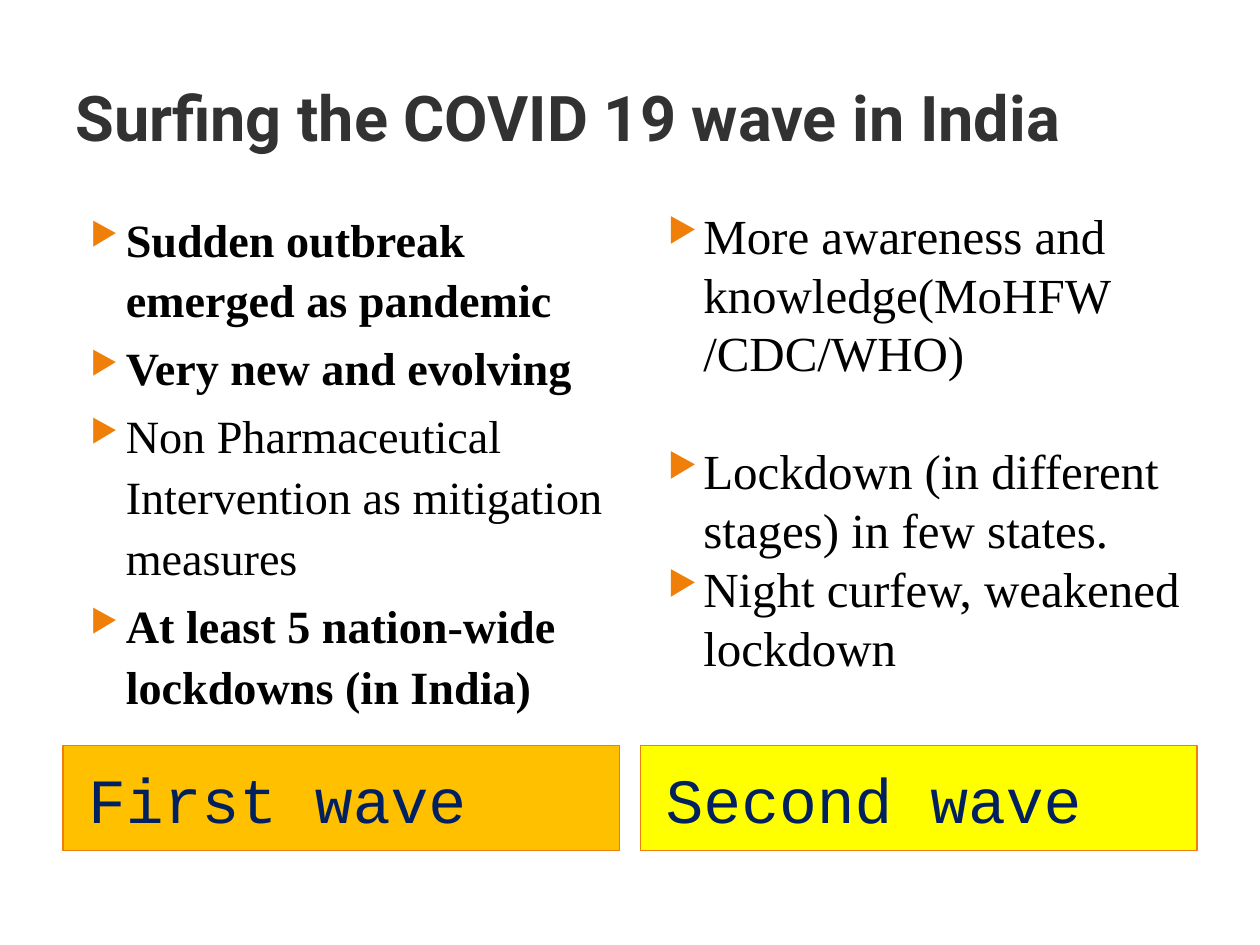
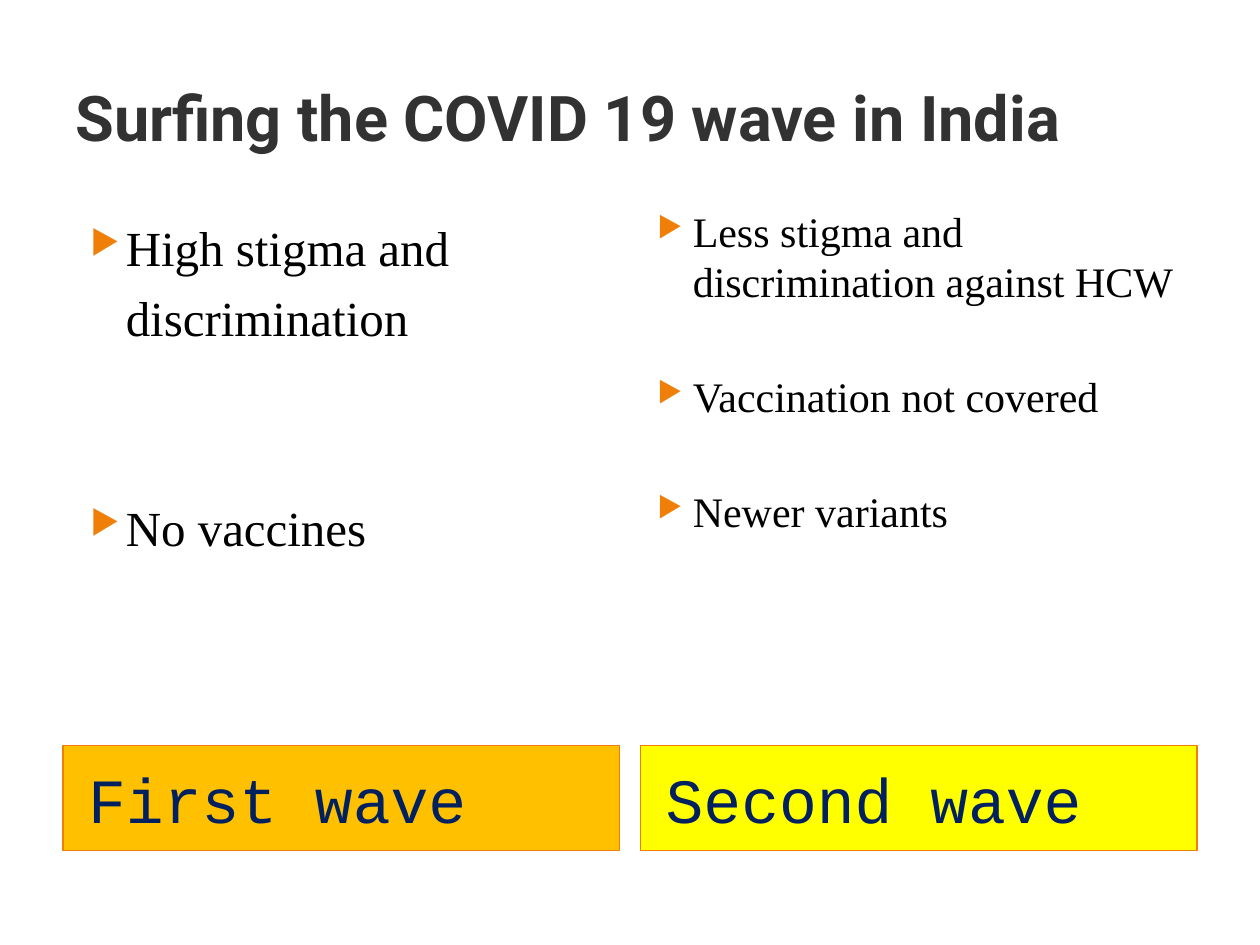
"""Builds two slides comparing the first and second COVID 19 waves in India."""
from lxml.etree import SubElement
from pptx import Presentation
from pptx.dml.color import RGBColor
from pptx.enum.shapes import MSO_SHAPE
from pptx.enum.text import MSO_ANCHOR, PP_ALIGN
from pptx.oxml.ns import qn
from pptx.util import Pt

COLORS = {"title": "323232", "accent": "F07F09", "text": "000000",
          "label": "002060", "first": "FFC000", "second": "FFFF00"}
FONTS = {"title": "Roboto", "points": "Times New Roman", "label": "Courier New"}
TITLE = "Surfing the COVID 19 wave in India"
WAVES = [("First wave", "first"), ("Second wave", "second")]

# Each point: wording, bold, line spacing, space before
SLIDES = [
    [
        {"left": 36, "size": 26.4, "points": [
            ("Sudden outbreak emerged as pandemic", True, 1.1, 0),
            ("Very new and evolving", True, 1.1, 4),
            ("Non Pharmaceutical Intervention as mitigation measures", False, 1.1, 4),
            ("At least 5 nation-wide lockdowns (in India)", True, 1.1, 4)]},
        {"left": 366, "size": 28, "points": [
            ("More awareness and knowledge(MoHFW /CDC/WHO)", False, 1.0, 0),
            ("Lockdown (in different stages) in few states.", False, 1.0, 33.6),
            ("Night curfew, weakened lockdown", False, 1.0, 0)]},
    ],
    [
        {"left": 36, "size": 28, "points": [
            ("High stigma and discrimination", False, 1.2, 0),
            ("No vaccines", False, 1.0, 86)]},
        {"left": 360, "size": 24, "points": [
            ("Less stigma and discrimination against HCW", False, 1.0, 0),
            ("Vaccination not covered", False, 1.0, 36.8),
            ("Newer variants", False, 1.0, 36.8)]},
    ],
]

MARGIN, COLUMN_WIDTH, COLUMN_STEP = 36, 318, 330
TITLE_TOP, TITLE_HEIGHT = 21.6, 90
POINTS_TOP, POINTS_HEIGHT = 113.8, 310
LABEL_TOP, LABEL_HEIGHT = 426, 60
INDENT, HANGING = 28.8, 20.2


def color(key):
    return RGBColor.from_string(COLORS[key])


def add_run(paragraph, wording, font, size, color_key, bold=False):
    run = paragraph.add_run()
    run.text = wording
    run.font.name = FONTS[font]
    run.font.size = Pt(size)
    run.font.bold = bold
    run.font.color.rgb = color(color_key)


def add_text_area(slide, left, top, width, height):
    frame = slide.shapes.add_textbox(Pt(left), Pt(top), Pt(width), Pt(height)).text_frame
    frame.word_wrap = True
    return frame


def add_bullet(paragraph):
    properties = paragraph._p.get_or_add_pPr()
    properties.set("marL", str(Pt(INDENT)))
    properties.set("indent", str(-Pt(HANGING)))
    bullet_color = SubElement(properties, qn("a:buClr"))
    SubElement(bullet_color, qn("a:srgbClr"), val=COLORS["accent"])
    SubElement(properties, qn("a:buSzPct"), val="68000")
    SubElement(properties, qn("a:buChar"), char="▶")


def add_title(slide):
    frame = add_text_area(slide, MARGIN, TITLE_TOP, 648, TITLE_HEIGHT)
    frame.vertical_anchor = MSO_ANCHOR.MIDDLE
    add_run(frame.paragraphs[0], TITLE, "title", 36, "title", True)


def add_wave_label(slide, column, wording, fill):
    label = slide.shapes.add_shape(
        MSO_SHAPE.RECTANGLE, Pt(MARGIN + column * COLUMN_STEP), Pt(LABEL_TOP),
        Pt(COLUMN_WIDTH), Pt(LABEL_HEIGHT))
    label.shadow.inherit = False
    label.fill.solid()
    label.fill.fore_color.rgb = color(fill)
    label.line.color.rgb = color("accent")
    label.line.width = Pt(0.75)
    frame = label.text_frame
    frame.word_wrap = True
    frame.margin_left = Pt(14.4)
    frame.vertical_anchor = MSO_ANCHOR.MIDDLE
    frame.paragraphs[0].alignment = PP_ALIGN.LEFT
    add_run(frame.paragraphs[0], wording, "label", 36, "label")


def add_points(slide, wave):
    frame = add_text_area(slide, wave["left"], POINTS_TOP, COLUMN_WIDTH, POINTS_HEIGHT)
    for index, (wording, bold, spacing, before) in enumerate(wave["points"]):
        paragraph = frame.add_paragraph() if index else frame.paragraphs[0]
        add_bullet(paragraph)
        paragraph.line_spacing = spacing
        paragraph.space_before = Pt(before)
        add_run(paragraph, wording, "points", wave["size"], "text", bold)


def main():
    deck = Presentation()
    deck.slide_width, deck.slide_height = Pt(720), Pt(540)
    for waves in SLIDES:
        slide = deck.slides.add_slide(deck.slide_layouts[6])
        add_title(slide)
        for column, (wording, fill) in enumerate(WAVES):
            add_wave_label(slide, column, wording, fill)
        for wave in waves:
            add_points(slide, wave)
    deck.save("out.pptx")


if __name__ == "__main__":
    main()
